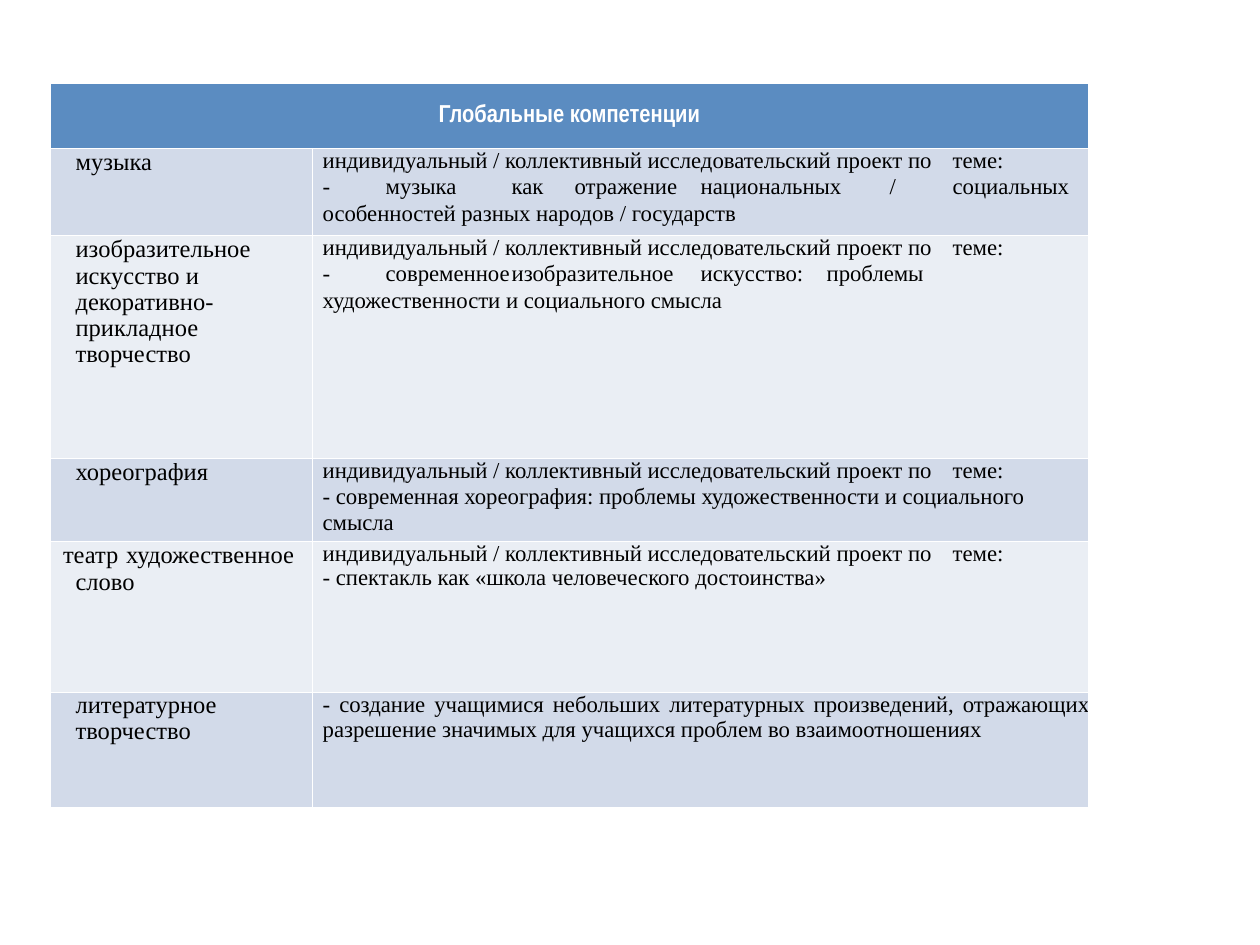
from lxml.etree import SubElement
from pptx import Presentation
from pptx.dml.color import RGBColor
from pptx.enum.text import MSO_ANCHOR, PP_ALIGN
from pptx.oxml.ns import qn
from pptx.util import Pt

WHITE = RGBColor(0xFF, 0xFF, 0xFF)
BLACK = RGBColor(0, 0, 0)
HEADER_BLUE = RGBColor(0x5B, 0x8C, 0xC1)
BANDS = [RGBColor(0xD2, 0xDA, 0xE9), RGBColor(0xEA, 0xEE, 0xF4)]

HEADING = "Глобальные компетенции"
PROJECT = "индивидуальный / коллективный исследовательский проект по\tтеме:"
TOPIC = {"text": PROJECT, "tabs": [360]}
ART = {"indent": 14.4, "size": 14}
ROWS = [
    ([{"text": "музыка", **ART}],
     [TOPIC,
      {"text": "-\tмузыка\tкак\tотражение\tнациональных\t/\tсоциальных "
               "особенностей разных народов / государств",
       "line": 15, "tabs": [24, 78.5, 111, 183.5, 278.5, 296]}]),
    ([{"text": "изобразительное искусство и", **ART},
      {"text": "декоративно-прикладное творчество", "line": 14.9, **ART}],
     [TOPIC,
      {"text": "-\tсовременное\tизобразительное\tискусство:\tпроблемы "
               "художественности и социального смысла",
       "line": 15, "tabs": [28.8, 118, 229.7, 307.4]}]),
    ([{"text": "хореография", **ART}],
     [TOPIC,
      {"text": "- современная хореография: проблемы художественности "
               "и социального смысла", "line": 14.9}]),
    ([{"text": "театр\tхудожественное", "size": 14, "indent": 7.2, "tabs": [44.8]},
      {"text": "слово", **ART}],
     [{"text": PROJECT, "tabs": [365.8]},
      {"text": "- спектакль как «школа человеческого достоинства»", "line": 13.8}]),
    ([{"text": "литературное творчество", "line": 14.8, **ART}],
     [{"text": "- создание учащимися небольших литературных произведений, "
               "отражающих разрешение значимых для учащихся проблем "
               "во взаимоотношениях", "align": PP_ALIGN.JUSTIFY}]),
]
COLUMN_WIDTHS = [149.8, 443.5]
ROW_HEIGHTS = [37.4, 49.7, 127.4, 47.5, 86.4, 65.5]
LEFT, TOP = 28.8, 47.5


def write(para, text, size=13, font="Times New Roman", color=BLACK, bold=False,
          align=PP_ALIGN.LEFT, indent=5.8, line=None, tabs=()):
    para.alignment = align
    properties = para._p.get_or_add_pPr()
    properties.set("marL", str(Pt(indent)))
    properties.set("indent", "0")
    if line:
        para.line_spacing = Pt(line)
    if tabs:
        stops = SubElement(properties, qn("a:tabLst"))
        for position in tabs:
            SubElement(stops, qn("a:tab"), pos=str(Pt(position)), algn="l")
    span = para.add_run()
    span.text = text
    span.font.size = Pt(size)
    span.font.name = font
    span.font.bold = bold
    span.font.color.rgb = color


def paint(cell, color):
    cell.fill.solid()
    cell.fill.fore_color.rgb = color


def fill_cell(cell, paragraphs, color):
    paint(cell, color)
    cell.margin_left = cell.margin_right = cell.margin_top = cell.margin_bottom = 0
    frame = cell.text_frame
    for index, content in enumerate(paragraphs):
        para = frame.add_paragraph() if index else frame.paragraphs[0]
        write(para, **content)


def main():
    deck = Presentation()
    deck.slide_width, deck.slide_height = Pt(720), Pt(540)
    page = deck.slides.add_slide(deck.slide_layouts[6])
    table = page.shapes.add_table(
        len(ROW_HEIGHTS), len(COLUMN_WIDTHS), Pt(LEFT), Pt(TOP),
        Pt(sum(COLUMN_WIDTHS)), Pt(sum(ROW_HEIGHTS))).table
    for column, width in zip(table.columns, COLUMN_WIDTHS):
        column.width = Pt(width)
    for row, height in zip(table.rows, ROW_HEIGHTS):
        row.height = Pt(height)

    header = table.cell(0, 0)
    header.merge(table.cell(0, 1))
    header.vertical_anchor = MSO_ANCHOR.MIDDLE
    paint(header, HEADER_BLUE)
    write(header.text_frame.paragraphs[0], HEADING, size=14, font="Arial Narrow",
          color=WHITE, bold=True, align=PP_ALIGN.CENTER, indent=0)

    for row_index, contents in enumerate(ROWS, start=1):
        for column_index, paragraphs in enumerate(contents):
            fill_cell(table.cell(row_index, column_index), paragraphs,
                      BANDS[(row_index - 1) % 2])
    deck.save("out.pptx")


if __name__ == "__main__":
    main()
